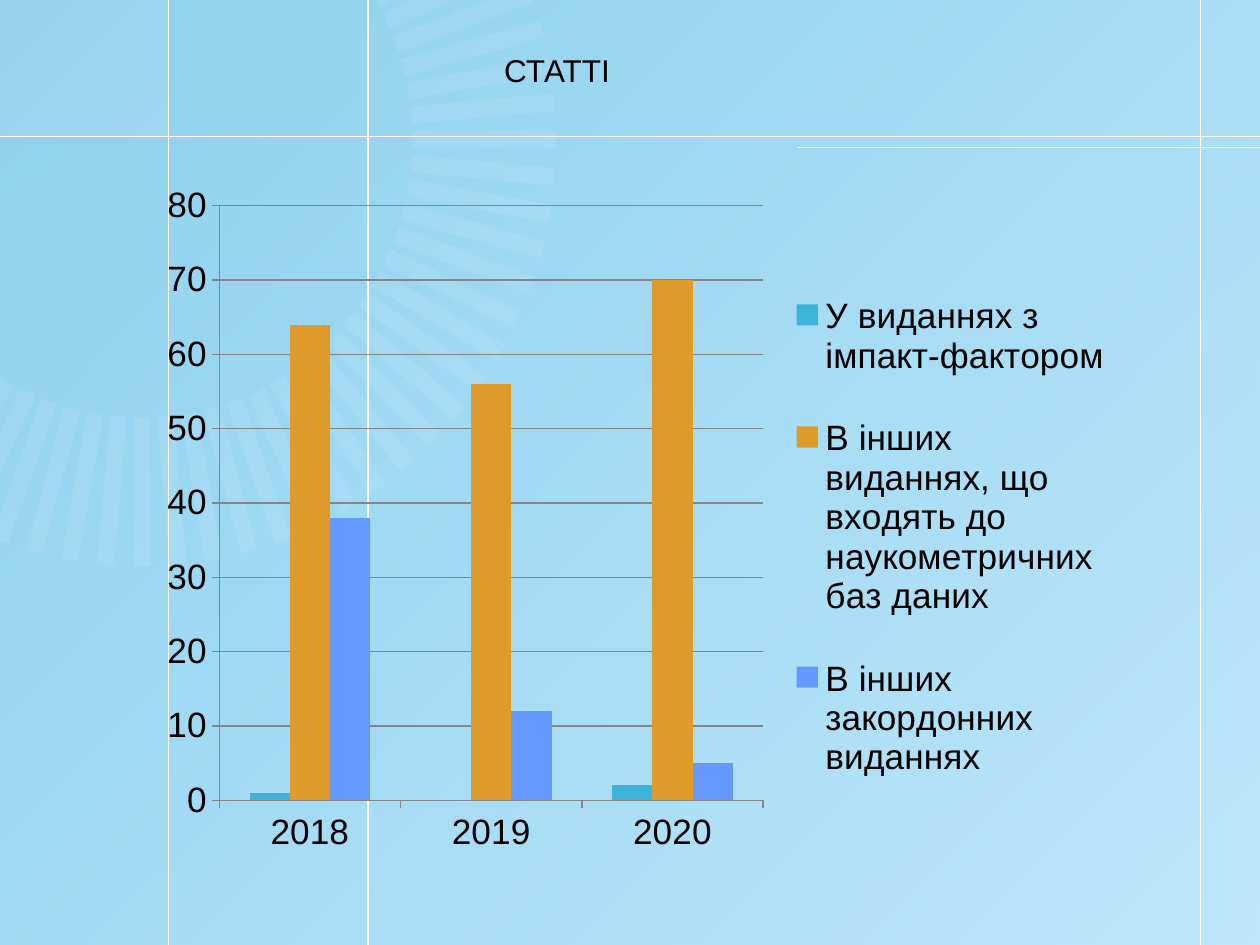
import math

import pptx
import pptx.chart.data
import pptx.dml.color
import pptx.enum.chart
import pptx.enum.shapes
import pptx.enum.text
import pptx.oxml
import pptx.oxml.ns
import pptx.util
from lxml import etree

Cm, Pt = pptx.util.Cm, pptx.util.Pt
qn = pptx.oxml.ns.qn
WIDTH, HEIGHT = 25.4, 19.05


def rgb(color):
    return pptx.dml.color.RGBColor.from_string(color)


def set_alpha(element, percents):
    """Give each colour inside the element its opacity in percent."""
    for clr, percent in zip(element.iter(qn("a:srgbClr")), percents):
        etree.SubElement(clr, qn("a:alpha")).set("val", str(percent * 1000))


def format_font(font, size=18, color="000000", name="Arial", bold=False):
    font.size, font.name, font.bold = Pt(size), name, bold
    font.color.rgb = rgb(color)


def write_text(tf, text, align=pptx.enum.text.PP_ALIGN.LEFT, **font):
    p = tf.paragraphs[0]
    p.alignment = align
    r = p.add_run()
    r.text = text
    format_font(r.font, **font)


def clip(points, axis):
    """Cut a polygon where the coordinate on the axis becomes negative."""
    kept = []
    for a, b in zip(points, points[1:] + points[:1]):
        if a[axis] >= 0:
            kept.append(a)
        if (a[axis] >= 0) != (b[axis] >= 0):
            t = a[axis] / (a[axis] - b[axis])
            kept.append(tuple(m + t * (n - m) for m, n in zip(a, b)))
    return kept


def set_layout(parent, x, y, w, h, inner=False):
    """Place a plot area or a legend by fractions of the chart."""
    for old in parent.findall(qn("c:layout")):
        parent.remove(old)
    layout = etree.Element(qn("c:layout"))
    manual = etree.SubElement(layout, qn("c:manualLayout"))
    parts = [("layoutTarget", "inner")] if inner else []
    parts += [("xMode", "edge"), ("yMode", "edge"),
              ("x", x), ("y", y), ("w", w), ("h", h)]
    for tag, value in parts:
        etree.SubElement(manual, qn("c:" + tag)).set("val", str(value))
    position = parent.find(qn("c:legendPos"))
    if position is None:
        parent.insert(0, layout)
    else:
        position.addnext(layout)


class SlideBuilder:
    white, spoke_color, axis_color = "FFFFFF", "F2FAFE", "868686"

    def __init__(self, prs):
        self.s = prs.slides.add_slide(prs.slide_layouts[5])

    def background(self, color):
        fill = self.s.background.fill
        fill.solid()
        fill.fore_color.rgb = rgb(color)

    def plain(self, sp, color, alpha):
        sp.shadow.inherit = False
        sp.line.fill.background()
        sp.fill.solid()
        sp.fill.fore_color.rgb = rgb(color)
        set_alpha(sp.fill._xPr, [alpha])

    def rect(self, x, y, w, h, color, alpha):
        sp = self.s.shapes.add_shape(
            pptx.enum.shapes.MSO_SHAPE.RECTANGLE, Cm(x), Cm(y), Cm(w), Cm(h))
        self.plain(sp, color, alpha)
        return sp

    def fade(self, color, start, end):
        sp = self.rect(0, 0, WIDTH, HEIGHT, color, 100)
        sp.fill.gradient()
        sp.fill.gradient_angle = 315
        for stop, position in zip(sp.fill.gradient_stops, (0, 1)):
            stop.color.rgb = rgb(color)
            stop.position = position
        set_alpha(sp.fill._xPr, [start, end])

    def line(self, x1, y1, x2, y2):
        c = self.s.shapes.add_connector(
            pptx.enum.shapes.MSO_CONNECTOR.STRAIGHT, Cm(x1), Cm(y1), Cm(x2), Cm(y2))
        c.line.width = Pt(0.75)
        c.line.color.rgb = rgb(self.white)
        etree.SubElement(c._element.spPr, qn("a:effectLst"))

    def polygon(self, points, color, alpha):
        (x, y), *rest = [(Cm(a), Cm(b)) for a, b in points]
        builder = self.s.shapes.build_freeform(x, y)
        builder.add_line_segments(rest, close=True)
        self.plain(builder.convert_to_shape(), color, alpha)

    def spokes(self, cx, cy, inner, outer, half, angles, stretch):
        for angle in angles:
            cos, sin = math.cos(math.radians(angle)), math.sin(math.radians(angle))
            corners = [(inner, -half), (outer, -half), (outer, half), (inner, half)]
            points = [(cx + u * cos - v * sin, cy + stretch * (u * sin + v * cos))
                      for u, v in corners]
            points = clip(clip(points, 0), 1)
            if points:
                self.polygon(points, self.spoke_color, 10)

    def title(self, text, x, y, w, h, **font):
        sp = self.s.shapes.title
        sp.left, sp.top, sp.width, sp.height = Cm(x), Cm(y), Cm(w), Cm(h)
        tf = sp.text_frame
        tf.word_wrap = True
        tf.auto_size = pptx.enum.text.MSO_AUTO_SIZE.NONE
        tf.vertical_anchor = pptx.enum.text.MSO_ANCHOR.TOP
        write_text(tf, text, **font)
        self.s.shapes._spTree.append(sp._element)  # bring to the front

    def column_chart(self, x, y, w, h, cats, series, size):
        data = pptx.chart.data.CategoryChartData()
        data.categories = cats
        for name, values, _ in series:
            data.add_series(name, values)
        chart = self.s.shapes.add_chart(
            pptx.enum.chart.XL_CHART_TYPE.COLUMN_CLUSTERED,
            Cm(x), Cm(y), Cm(w), Cm(h), data).chart
        chart.has_title = False
        format_font(chart.font, size=size)

        # Columns
        plot = chart.plots[0]
        plot.gap_width, plot.overlap, plot.vary_by_categories = 150, 0, False
        for ser, (_, _, color) in zip(plot.series, series):
            ser.format.fill.solid()
            ser.format.fill.fore_color.rgb = rgb(color)

        # Axes and grid
        axis = chart.value_axis
        axis.minimum_scale, axis.maximum_scale, axis.major_unit = 0, 80, 10
        axis.has_major_gridlines = True
        lines = [axis.major_gridlines.format.line]
        for ax in (axis, chart.category_axis):
            ax.major_tick_mark = pptx.enum.chart.XL_TICK_MARK.OUTSIDE
            lines.append(ax.format.line)
        for line in lines:
            line.width = Pt(0.75)
            line.color.rgb = rgb(self.axis_color)

        # Legend
        chart.has_legend = True
        chart.legend.position = pptx.enum.chart.XL_LEGEND_POSITION.RIGHT
        chart.legend.include_in_layout = False
        set_layout(chart.legend._element, 0.66, 0.12, 0.33, 0.82)
        set_layout(chart._chartSpace.chart.plotArea, 0.07, 0.05, 0.56, 0.86, inner=True)


def main():
    prs = pptx.Presentation()
    prs.slide_width, prs.slide_height = Cm(WIDTH), Cm(HEIGHT)
    b = SlideBuilder(prs)

    # Backdrop
    b.background("BCE7FA")
    b.fade("0F92CC", 27, 0)
    b.rect(0, 0, 3.39, 2.75, b.white, 10)
    for x in (3.39, 24.2, 7.42):
        b.line(x, 0, x, HEIGHT)
    b.line(0, 2.75, WIDTH, 2.75)
    b.line(16.08, 2.97, WIDTH, 2.97)
    b.spokes(2.86, 2.81, 5.45, 8.35, 0.17, range(-30, 121, 5), stretch=1.03)

    # Chart and title
    b.column_chart(3.05, 3.45, 19.58, 13.94, ["2018", "2019", "2020"], [
        ("У виданнях з імпакт-фактором", (1, 0, 2), "3DB5DB"),
        ("В інших виданнях, що входять до наукометричних баз даних",
         (64, 56, 70), "DF9B29"),
        ("В інших закордонних виданнях", (38, 12, 5), "6699FF"),
    ], size=20.1)
    b.title("СТАТТІ", 9.91, 0.91, 5.99, 1.8, size=18)

    prs.save("out.pptx")


if __name__ == "__main__":
    main()
